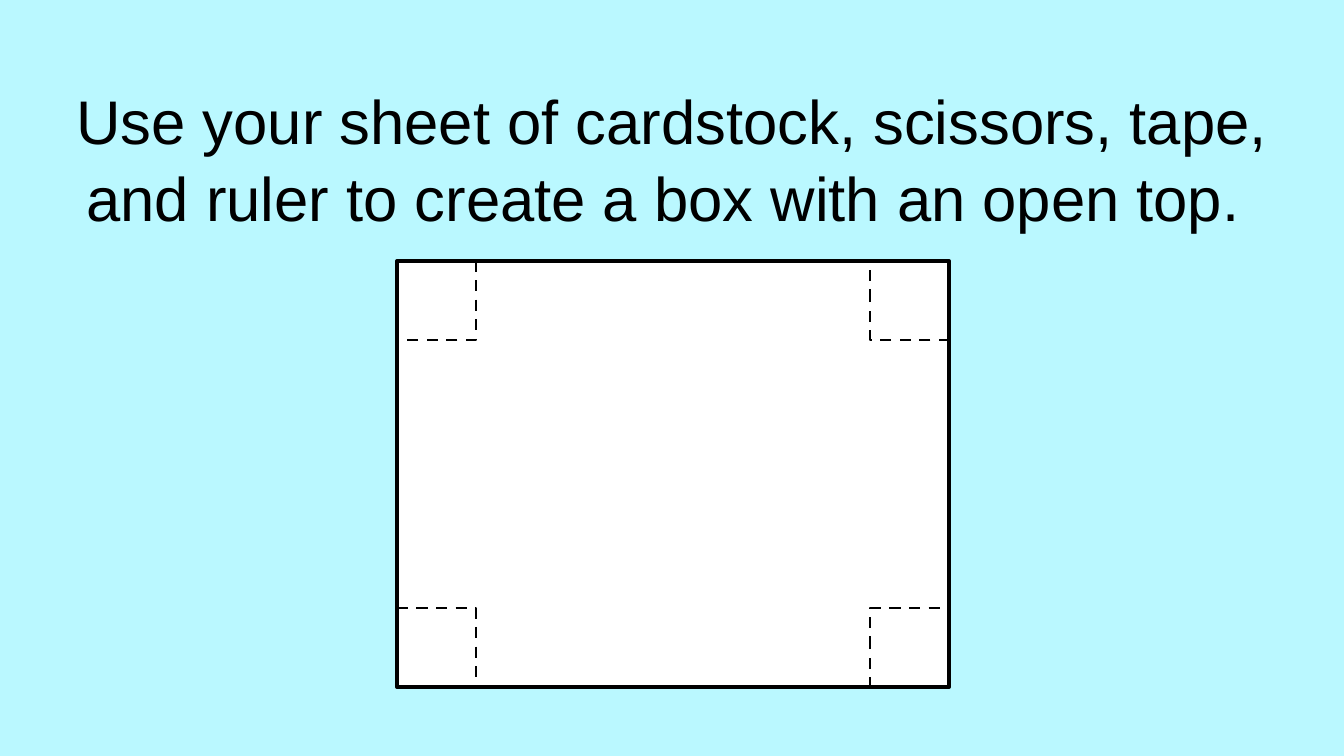
from dataclasses import dataclass

from pptx import Presentation
from pptx.dml.color import RGBColor
from pptx.enum.dml import MSO_LINE
from pptx.enum.shapes import MSO_SHAPE
from pptx.enum.text import MSO_ANCHOR, MSO_AUTO_SIZE, PP_ALIGN
from pptx.util import Emu, Pt

RECTANGLE = MSO_SHAPE.RECTANGLE
DASH = MSO_LINE.DASH
TOP = MSO_ANCHOR.TOP
CENTER = PP_ALIGN.CENTER
NO_AUTOFIT = MSO_AUTO_SIZE.NONE
TITLE_ONLY = 5

# Content; lengths in px
INSTRUCTION = ("Use your sheet of cardstock, scissors, tape, "
               "and ruler to create a box with an open top. ")
SLIDE_SIZE = (1344, 756)
TITLE_BOX = (46, 66, 1252, 85)
TITLE_INSET = 13
SHEET = (397, 261, 552, 426)
CUT = 79


@dataclass(frozen=True)
class Theme:
    background: RGBColor = RGBColor(0xBA, 0xF8, 0xFF)
    paper: RGBColor = RGBColor(0xFF, 0xFF, 0xFF)
    ink: RGBColor = RGBColor(0, 0, 0)
    font: str = "Arial"
    title_size: Pt = Pt(33)
    title_spacing: float = 1.05
    sheet_line: Pt = Pt(2.25)
    cut_line: Pt = Pt(1.5)


THEME = Theme()


def px(length):
    return Emu(round(length * 914400 / 134.4))


def format_title(title):
    title.left, title.top, title.width, title.height = map(px, TITLE_BOX)
    frame = title.text_frame
    frame.text = INSTRUCTION
    frame.word_wrap = True
    frame.auto_size = NO_AUTOFIT
    frame.vertical_anchor = TOP
    frame.margin_left = frame.margin_right = px(TITLE_INSET)
    frame.margin_top = frame.margin_bottom = px(TITLE_INSET)
    paragraph = frame.paragraphs[0]
    paragraph.alignment = CENTER
    paragraph.line_spacing = THEME.title_spacing
    font = paragraph.runs[0].font
    font.name, font.size = THEME.font, THEME.title_size
    font.color.rgb = THEME.ink


def add_turned_rectangle(group, left, top, width, height, line_width):
    """Add an outline covering the given area, turned by a quarter."""
    shift = (width - height) / 2
    rectangle = group.shapes.add_shape(
        RECTANGLE, px(left + shift), px(top - shift), px(height), px(width))
    rectangle.rotation = 90
    rectangle.shadow.inherit = False
    rectangle.fill.background()
    rectangle.line.color.rgb = THEME.ink
    rectangle.line.width = line_width
    return rectangle


def add_cardstock(slide):
    group = slide.shapes.add_group_shape()
    sheet = add_turned_rectangle(group, *SHEET, THEME.sheet_line)
    sheet.fill.solid()
    sheet.fill.fore_color.rgb = THEME.paper

    left, top, width, height = SHEET
    right, bottom = left + width - CUT, top + height - CUT
    for x, y in [(right, bottom), (right, top), (left, top), (left, bottom)]:
        corner = add_turned_rectangle(group, x, y, CUT, CUT, THEME.cut_line)
        corner.line.dash_style = DASH


def main():
    deck = Presentation()
    deck.slide_width, deck.slide_height = map(px, SLIDE_SIZE)
    slide = deck.slides.add_slide(deck.slide_layouts[TITLE_ONLY])
    slide.background.fill.solid()
    slide.background.fill.fore_color.rgb = THEME.background
    format_title(slide.shapes.title)
    add_cardstock(slide)
    deck.save("out.pptx")


if __name__ == "__main__":
    main()
